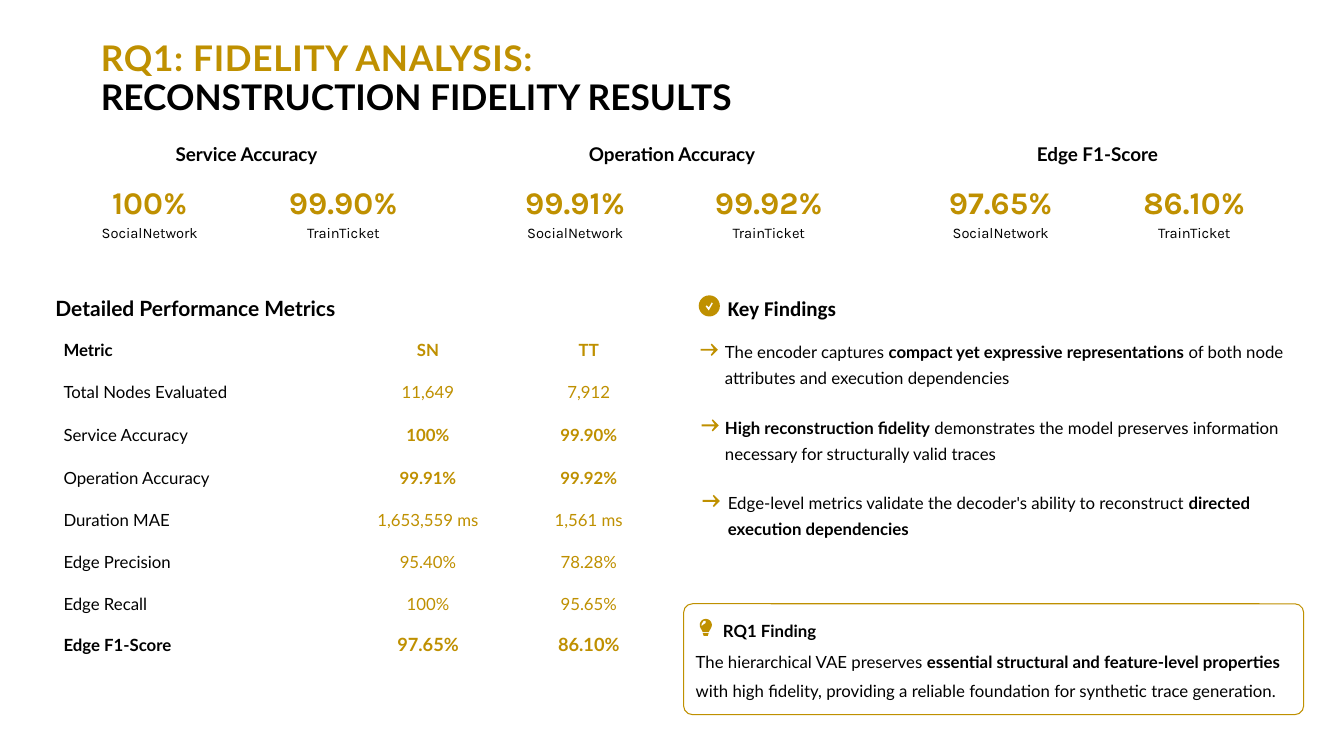
"""Build the reconstruction fidelity results slide."""
import math
from dataclasses import dataclass

import lxml.etree
import pptx
import pptx.dml.color
import pptx.enum.shapes
import pptx.enum.text
import pptx.oxml.ns
import pptx.util

Inches = pptx.util.Inches
Align = pptx.enum.text.PP_ALIGN
Preset = pptx.enum.shapes.MSO_SHAPE


@dataclass(frozen=True)
class Theme:
    gold: str = "BF9000"
    black: str = "000000"
    white: str = "FFFFFF"
    shadow: str = "78716C"
    text_font: str = "Lato"
    number_font: str = "Karla"
    findings_font: str = "Calibri"
    title: float = 25.2
    value: float = 22.5
    heading: float = 15
    metric: float = 13.5
    total: float = 13
    body: float = 12
    label: float = 10.5


THEME = Theme()
TITLE = ("RQ1: FIDELITY ANALYSIS:", "RECONSTRUCTION FIDELITY RESULTS")
DATASETS = ("SocialNetwork", "TrainTicket")
METRICS = [
    ("Service Accuracy", ("100%", "99.90%")),
    ("Operation Accuracy", ("99.91%", "99.92%")),
    ("Edge F1-Score", ("97.65%", "86.10%")),
]
TABLE_HEADING = "Detailed Performance Metrics"
TABLE_ROWS = [
    ("Metric", "SN", "TT"),
    ("Total Nodes Evaluated", "11,649", "7,912"),
    ("Service Accuracy", "100%", "99.90%"),
    ("Operation Accuracy", "99.91%", "99.92%"),
    ("Duration MAE", "1,653,559 ms", "1,561 ms"),
    ("Edge Precision", "95.40%", "78.28%"),
    ("Edge Recall", "100%", "95.65%"),
    ("Edge F1-Score", "97.65%", "86.10%"),
]
BOLD_LABEL_ROWS = {0, 7}
BOLD_VALUE_ROWS = {0, 2, 3, 7}
COLUMN_WIDTHS = (2.71, 1.97, 1.22)
ROW_HEIGHTS = (0.42, 0.42, 0.43, 0.42, 0.42, 0.42, 0.4, 0.42)
FINDINGS_HEADING = "Key Findings"
FINDINGS = [
    (6.95, 7.19, "The encoder captures **compact yet expressive representations** "
     "of both node attributes and execution dependencies"),
    (6.96, 7.19, "**High reconstruction fidelity** demonstrates the model preserves "
     "information necessary for structurally valid traces"),
    (6.97, 7.22, "Edge-level metrics validate the decoder's ability to reconstruct "
     "**directed execution dependencies**"),
]
CONCLUSION_HEADING = "RQ1 Finding"
CONCLUSION = ("The hierarchical VAE preserves **essential structural and feature-level "
              "properties** with high fidelity, providing a reliable foundation for "
              "synthetic trace generation.")
ARROW = [(0, 0.07), (0.13, 0.07), (0.1, 0.03), (0.11, 0.02), (0.17, 0.08),
         (0.11, 0.14), (0.1, 0.13), (0.13, 0.09), (0, 0.09)]
CHECK = [(0.07, 0.11), (0.08, 0.1), (0.1, 0.12), (0.13, 0.07), (0.14, 0.08), (0.1, 0.15)]
BULB = [(0.06 + 0.06 * math.cos(math.radians(angle)), 0.06 + 0.06 * math.sin(math.radians(angle)))
        for angle in range(150, 391, 15)] + [(0.09, 0.13), (0.03, 0.13)]
BULB_BASE = [(0.03, 0.14), (0.09, 0.14), (0.08, 0.17), (0.04, 0.17)]
GLINT = [(0.02, 0.07), (0.02, 0.05), (0.04, 0.02), (0.06, 0.02), (0.06, 0.04), (0.03, 0.06)]


def rgb(color):
    return pptx.dml.color.RGBColor.from_string(color)


def style(font, size, color, bold=False, name=THEME.text_font):
    font.size, font.bold, font.name = pptx.util.Pt(size), bold, name
    font.color.rgb = rgb(color)


def set_frame(frame):
    frame.word_wrap = True
    frame.auto_size = pptx.enum.text.MSO_AUTO_SIZE.NONE
    frame.vertical_anchor = pptx.enum.text.MSO_ANCHOR.MIDDLE
    frame.margin_left = frame.margin_top = frame.margin_right = frame.margin_bottom = 0


def add_text(slide, box, text, size, color=THEME.black, bold=False,
             name=THEME.text_font, align=Align.LEFT, spacing=1.0):
    frame = slide.shapes.add_textbox(*map(Inches, box)).text_frame
    set_frame(frame)
    paragraph = frame.paragraphs[0]
    paragraph.alignment, paragraph.line_spacing = align, spacing
    style(paragraph.font, size, color, bold, name)
    for index, part in enumerate(text.split("**")):
        if part:
            run = paragraph.add_run()
            run.text = part
            if index % 2:
                run.font.bold = True


def paint(shape, color):
    shape.fill.solid()
    shape.fill.fore_color.rgb = rgb(color)
    shape.line.fill.background()
    shape.shadow.inherit = False


def add_outline(slide, left, top, points, color=THEME.gold):
    corners = [(Inches(left + x), Inches(top + y)) for x, y in points]
    builder = slide.shapes.build_freeform(*corners[0])
    builder.add_line_segments(corners[1:])
    paint(builder.convert_to_shape(), color)


def add_title(slide):
    title = slide.shapes.title
    title.left, title.top, title.width, title.height = map(Inches, (1, 0.4, 7.95, 0.78))
    set_frame(title.text_frame)
    paragraph = title.text_frame.paragraphs[0]
    paragraph.alignment, paragraph.line_spacing = Align.LEFT, 0.9
    style(paragraph.font, THEME.title, THEME.black, True)
    topic = paragraph.add_run()
    topic.text = TITLE[0]
    topic.font.color.rgb = rgb(THEME.gold)
    topic.font._element.set("spc", "50")
    paragraph.add_line_break()
    paragraph.add_run().text = TITLE[1]


def add_metrics(slide):
    for column, (metric, values) in enumerate(METRICS):
        left = 0.52 + 4.22 * column
        add_text(slide, (left, 1.35, 3.85, 0.29), metric, THEME.metric, bold=True,
                 align=Align.CENTER, spacing=1.3)
        for index, (value, dataset) in enumerate(zip(values, DATASETS)):
            start = left + 0.05 + 1.92 * index
            add_text(slide, (start, 1.81, 1.83, 0.38), value, THEME.value, THEME.gold, True,
                     THEME.number_font, Align.CENTER)
            add_text(slide, (start + 0.04, 2.19, 1.75, 0.21), dataset, THEME.label,
                     name=THEME.number_font, align=Align.CENTER, spacing=1.2)


def add_performance_table(slide):
    add_text(slide, (0.55, 2.89, 6, 0.29), TABLE_HEADING, THEME.heading, bold=True, spacing=1.2)
    table = slide.shapes.add_table(len(TABLE_ROWS), len(COLUMN_WIDTHS), Inches(0.55), Inches(3.26),
                                   Inches(sum(COLUMN_WIDTHS)), Inches(sum(ROW_HEIGHTS))).table
    for column, width in zip(table.columns, COLUMN_WIDTHS):
        column.width = Inches(width)
    for row_index, row in enumerate(TABLE_ROWS):
        table.rows[row_index].height = Inches(ROW_HEIGHTS[row_index])
        for column_index, text in enumerate(row):
            cell = table.cell(row_index, column_index)
            cell.fill.solid()
            cell.fill.fore_color.rgb = rgb(THEME.white)
            cell.vertical_anchor = pptx.enum.text.MSO_ANCHOR.MIDDLE
            cell.margin_left = cell.margin_right = Inches(0.08)
            cell.margin_top = cell.margin_bottom = Inches(0.08)
            cell.text = text
            is_value = column_index > 0
            is_total = is_value and row_index == len(TABLE_ROWS) - 1
            paragraph = cell.text_frame.paragraphs[0]
            paragraph.alignment = Align.CENTER if is_value else Align.LEFT
            style(paragraph.font, THEME.total if is_total else THEME.body,
                  THEME.gold if is_value else THEME.black,
                  row_index in (BOLD_VALUE_ROWS if is_value else BOLD_LABEL_ROWS))


def add_findings(slide):
    paint(slide.shapes.add_shape(Preset.OVAL, *map(Inches, (6.93, 2.93, 0.21, 0.21))), THEME.gold)
    add_outline(slide, 6.93, 2.93, CHECK, THEME.white)
    add_text(slide, (7.22, 2.89, 5.74, 0.29), FINDINGS_HEADING, THEME.heading, bold=True,
             name=THEME.findings_font, spacing=1.2)
    for index, (arrow_left, text_left, finding) in enumerate(FINDINGS):
        top = 3.34 + 0.75 * index
        add_outline(slide, arrow_left, top + 0.05, ARROW)
        add_text(slide, (text_left, top, 12.78 - text_left, 0.5), finding, THEME.body, spacing=1.3)


def add_conclusion(slide):
    box = slide.shapes.add_shape(Preset.ROUNDED_RECTANGLE, *map(Inches, (6.78, 5.99, 6.15, 1.1)))
    box.adjustments[0] = 0.08
    box.fill.background()
    box.line.color.rgb = rgb(THEME.gold)
    box.line.width = 0
    box.shadow.inherit = False
    effects = box._element.spPr.find(pptx.oxml.ns.qn("a:effectLst"))
    shadow = lxml.etree.SubElement(effects, pptx.oxml.ns.qn("a:outerShdw"),
                                   blurRad=str(Inches(0.5)), dist="0", dir="0")
    color = lxml.etree.SubElement(shadow, pptx.oxml.ns.qn("a:srgbClr"), val=THEME.shadow)
    lxml.etree.SubElement(color, pptx.oxml.ns.qn("a:alpha"), val="8000")
    for points, fill in ((BULB, THEME.gold), (BULB_BASE, THEME.gold), (GLINT, THEME.white)):
        add_outline(slide, 6.94, 6.14, points, fill)
    add_text(slide, (7.17, 6.1, 5.69, 0.25), CONCLUSION_HEADING, THEME.body, bold=True, spacing=1.3)
    add_text(slide, (6.9, 6.4, 5.96, 0.54), CONCLUSION, THEME.body, spacing=1.4)


def main():
    presentation = pptx.Presentation()
    presentation.slide_width, presentation.slide_height = Inches(13.33), Inches(7.5)
    slide = presentation.slides.add_slide(presentation.slide_layouts[5])
    for add_part in (add_title, add_metrics, add_performance_table, add_findings, add_conclusion):
        add_part(slide)
    presentation.save("out.pptx")


if __name__ == "__main__":
    main()
